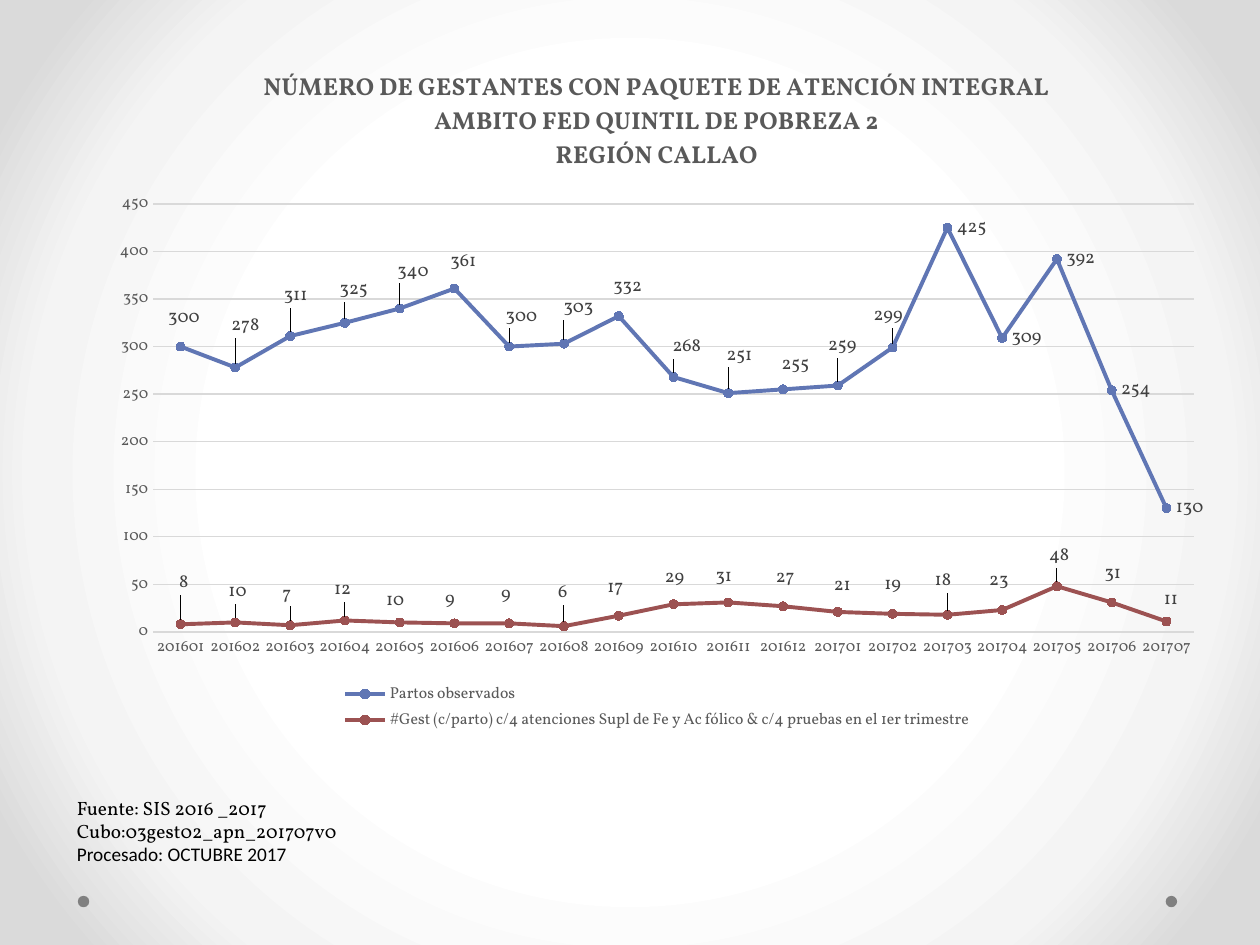
from lxml import etree
from pptx import Presentation
from pptx.chart import data as chart_data
from pptx.dml.color import RGBColor
from pptx.enum import chart as ch, shapes, text
from pptx.oxml import ns, parse_xml
from pptx.util import Cm, Pt

WHITE = RGBColor(0xFF, 0xFF, 0xFF)
PALE = RGBColor(0xF4, 0xF4, 0xF4)
SILVER = RGBColor(0xDA, 0xDA, 0xDA)
GRID = RGBColor(0xD9, 0xD9, 0xD9)
DOT = RGBColor(0x80, 0x80, 0x80)
BLACK = RGBColor(0, 0, 0)
DARK = RGBColor(0x40, 0x40, 0x40)
GRAY = RGBColor(0x59, 0x59, 0x59)
BLUE = RGBColor(0x60, 0x76, 0xB4)
RED = RGBColor(0x9C, 0x52, 0x52)
SERIF = "Vollkorn"

MONTHS = [f"2016{m:02}" for m in range(1, 13)] + [f"2017{m:02}" for m in range(1, 8)]
TITLE = ["NÚMERO DE GESTANTES CON PAQUETE DE ATENCIÓN INTEGRAL",
         "AMBITO FED QUINTIL DE POBREZA 2", "REGIÓN CALLAO"]
SOURCE = [("Fuente: SIS 2016 _2017", SERIF),
          ("Cubo:03gest02_apn_201707v0", SERIF),
          ("Procesado: OCTUBRE 2017", "Calibri")]
BIRTHS = [300, 278, 311, 325, 340, 361, 300, 303, 332, 268, 251, 255, 259,
          299, 425, 309, 392, 254, 130]
PACKAGES = [8, 10, 7, 12, 10, 9, 9, 6, 17, 29, 31, 27, 21, 19, 18, 23, 48, 31, 11]
BIRTH_SHIFTS = list(zip(
    [.3, .9, .5, .8, 1.2, .8, 1.1, 1.3, .8, 1.2, 1, 1.1, .4, -.4],
    [-1, -2.8, -2.6, -1.6, -2.2, -.7, -1.2, -2, -1, -1.2, -2.3, -.4, -2.6, -1.4]))
PACKAGE_SHIFTS = list(zip(
    [.3, .2, -.3, -.2, -.4, -.4, -.3, -.1, -.3, .1, -.4, .2, .4, 0, -.4, -.3, .2, .1, .4],
    [-2.8, -1.2, -1.3, -1.2, 0, -.3, -1, -1.7, -.9, -.6, -.6, -1, -.6, -1, -1.7,
     -1, -1.2, -1, 0]))
LINES = [
    ("Partos observados", BIRTHS, BLUE, BIRTH_SHIFTS),
    ("#Gest (c/parto) c/4 atenciones Supl de Fe y Ac fólico & c/4 pruebas "
     "en el 1er trimestre", PACKAGES, RED, PACKAGE_SHIFTS),
]


def style_font(font, size, color, name=SERIF, bold=False):
    font.size, font.name, font.bold = Pt(size), name, bold
    font.color.rgb = color


def write_lines(frame, lines, size, color, bold=False, align=None):
    for i, (line, name) in enumerate(lines):
        paragraph = frame.paragraphs[0] if i == 0 else frame.add_paragraph()
        paragraph.alignment = align
        run = paragraph.add_run()
        run.text = line
        style_font(run.font, size, color, name, bold)


def manual_layout(target=None, **values):
    layout = etree.Element(ns.qn("c:layout"))
    manual = etree.SubElement(layout, ns.qn("c:manualLayout"))
    if target:
        etree.SubElement(manual, ns.qn("c:layoutTarget"), val=target)
        for mode in ("xMode", "yMode"):
            etree.SubElement(manual, ns.qn(f"c:{mode}"), val="edge")
    for key, value in values.items():
        etree.SubElement(manual, ns.qn(f"c:{key}"), val=str(value))
    return layout


def paint_background(slide):
    slide.background.fill.gradient()
    gradient = slide.element.find(".//" + ns.qn("a:gradFill"))
    stops = "".join(
        f'<a:gs pos="{pos * 1000}"><a:srgbClr val="{color}"/></a:gs>'
        for pos, color in ((50, WHITE), (76, PALE), (92, SILVER)))
    gradient.getparent().replace(gradient, parse_xml(
        f'<a:gradFill {ns.nsdecls("a")} rotWithShape="1"><a:gsLst>{stops}</a:gsLst>'
        '<a:path path="circle"><a:fillToRect l="50000" t="50000" r="50000" b="50000"/>'
        '</a:path></a:gradFill>'))


def add_corner_dots(slide, left, top, width, size):
    for x in (left, left + width - size):
        dot = slide.shapes.add_shape(shapes.MSO_SHAPE.OVAL, x, top, size, size)
        dot.shadow.inherit = False
        dot.fill.solid()
        dot.fill.fore_color.rgb = DOT
        dot.line.fill.background()


def add_source(slide, left, top, width, height):
    source = slide.shapes.add_textbox(left, top, width, height).text_frame
    source.word_wrap = True
    source.auto_size = text.MSO_AUTO_SIZE.SHAPE_TO_FIT_TEXT
    write_lines(source, SOURCE, 11, BLACK)


def style_axes(chart):
    months, counts = chart.category_axis, chart.value_axis
    for axis in (months, counts):
        axis.major_tick_mark = axis.minor_tick_mark = ch.XL_TICK_MARK.NONE
        style_font(axis.tick_labels.font, 9, GRAY)
    counts.minimum_scale, counts.maximum_scale, counts.major_unit = 0, 450, 50
    counts.format.line.fill.background()
    for line in (months.format.line, counts.major_gridlines.format.line):
        line.color.rgb = GRID
        line.width = Pt(0.75)


def style_series(series, color, shifts):
    series.smooth = False
    series.format.line.color.rgb = color
    series.format.line.width = Pt(2.25)
    series.marker.style = ch.XL_MARKER_STYLE.CIRCLE
    series.marker.size = 5
    series.marker.format.fill.solid()
    series.marker.format.fill.fore_color.rgb = color
    series.marker.format.line.color.rgb = color
    labels = series.data_labels
    labels.show_value = True
    labels.position = ch.XL_LABEL_POSITION.RIGHT
    style_font(labels.font, 10.5, DARK)
    for i, (x, y) in enumerate(shifts):
        label = series.points[i].data_label
        style_font(label.font, 10.5, DARK)
        label.position = ch.XL_LABEL_POSITION.ABOVE
    for tag, (x, y) in zip(labels._element.findall(ns.qn("c:dLbl")), shifts):
        tag.insert(1, manual_layout(x=round(x / 100, 3), y=round(y / 100, 3)))


def add_births_chart(slide, left, top, width, height):
    table = chart_data.CategoryChartData(number_format="0")
    table.categories = MONTHS
    for name, values, _, _ in LINES:
        table.add_series(name, values)
    chart = slide.shapes.add_chart(
        ch.XL_CHART_TYPE.LINE_MARKERS, left, top, width, height, table).chart
    style_font(chart.font, 10, BLACK)
    plot = chart.plots[0]
    plot.vary_by_categories = False
    for series, (_, _, color, shifts) in zip(plot.series, LINES):
        style_series(series, color, shifts)
    style_axes(chart)

    write_lines(chart.chart_title.text_frame, [(line, SERIF) for line in TITLE],
                14, GRAY, bold=True, align=text.PP_ALIGN.CENTER)
    chart.chart_title.include_in_layout = False
    chart.has_legend = True
    chart.legend.position = ch.XL_LEGEND_POSITION.BOTTOM
    chart.legend.include_in_layout = False
    style_font(chart.legend.font, 9, GRAY)

    area = chart._chartSpace.find(".//" + ns.qn("c:plotArea"))
    for old in area.findall(ns.qn("c:layout")):
        area.remove(old)
    area.insert(0, manual_layout("inner", x=0.05, y=0.23, w=0.93, h=0.62))


def main():
    deck = Presentation()
    deck.slide_width, deck.slide_height = Cm(25.4), Cm(19.05)
    slide = deck.slides.add_slide(deck.slide_layouts[6])
    paint_background(slide)
    add_corner_dots(slide, Cm(1.57), Cm(18.06), Cm(22.16), Cm(0.23))
    add_source(slide, Cm(1.3), Cm(15.93), Cm(7.59), Cm(1.68))
    add_births_chart(slide, Cm(1.96), Cm(0.91), Cm(22.56), Cm(13.92))
    deck.save("out.pptx")


if __name__ == "__main__":
    main()
